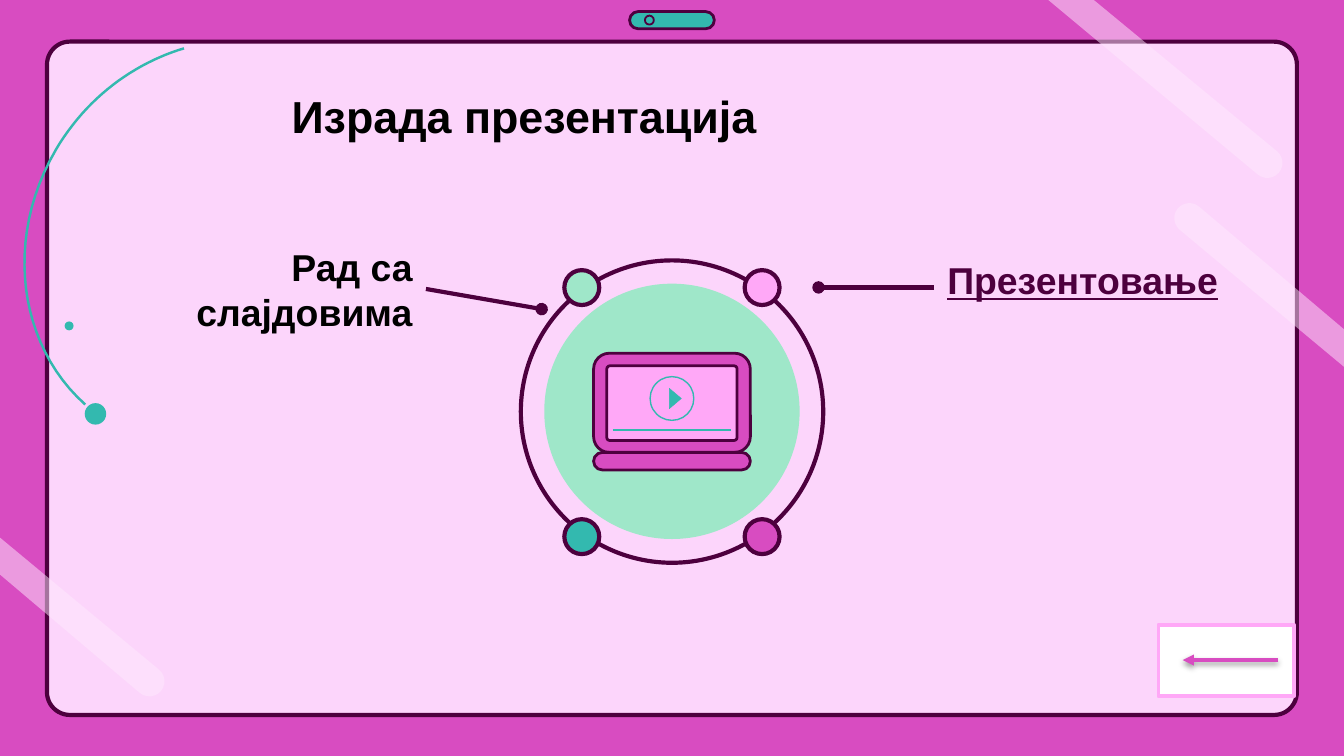
"""Build the slide that introduces making presentations, around a laptop emblem."""
from math import cos, radians, sin

from lxml import etree
from pptx import Presentation
from pptx import util as u
from pptx.dml.color import RGBColor
from pptx.enum import shapes, text
from pptx.oxml import ns

HUES = {"plum": "4D003E", "pink": "D84CC1", "pale": "FCD5FB", "rose": "FFA8F7",
        "teal": "33B9AF", "mint": "9FE7C9", "glow": "FFE9FE",
        "white": "FFFFFF", "black": "000000"}
TITLE = ("Израда презентација", (149, 43.9, 440.6, 36))
LABELS = [
    ("Рад са слајдовима", (64.8, 129.6, 163.4, 50.4), "black", "RIGHT", False),
    ("Презентовање", (500.4, 118.1, 163.4, 63.4), "plum", "LEFT", True),
]
KINDS = {"oval": shapes.MSO_SHAPE.OVAL, "box": shapes.MSO_SHAPE.RECTANGLE,
         "round": shapes.MSO_SHAPE.ROUNDED_RECTANGLE}
FRAME = [
    ("round", (25.2, 22.3, 669.6, 360.7), "pale", "plum", 2.25, 0.034),
    ("round", (337.3, 6.2, 45.4, 9.2), "teal", "plum", 1.5, 0.5),
    ("oval", (345.5, 8.4, 4.8, 4.8), None, "plum", 1, None),
    ("oval", (34.6, 172.2, 4.8, 4.8), "teal", None, 0, None),
    ("oval", (45.4, 216, 11.5, 11.5), "teal", None, 0, None),
]
EMBLEM = [
    ("oval", (291.6, 152, 136.8, 136.8), "mint", None, 0, None),
    ("oval", (279, 139.5, 162, 162), None, "plum", 2.25, None),
    ("round", (318, 189.2, 84, 53.2), "pink", "plum", 1.5, 0.16),
    ("round", (325.1, 196, 69.8, 40), "rose", "plum", 1.5, 0.04),
    ("oval", (348.3, 201.8, 23.4, 23.4), None, "teal", 0.75, None),
    ("round", (318, 242.4, 84, 9.4), "pink", "plum", 1.5, 0.5),
]
DOTS = ["mint", "rose", "teal", "pink"]
DOT, MID, REACH = 18.7, (360, 220.8), (48.3, 66.7)
BUTTON = ("box", (620.6, 334.8, 72.7, 38.2), "white", "rose", 2, None)
PLAY = [(358.6, 208.1), (358.6, 218.9), (365, 213.5)]
ARC = [[(45.7, 216.7), (10, 185), (2, 128), (29.9, 80.3)],
       [(29.9, 80.3), (46.4, 52.2), (72, 33.8), (98.6, 25.9)]]
STREAKS = [  # start, tip, heading, finish
    ((561.6, 0), (679, 87.3), 40, (586, 0)),
    ((0, 307.8), (80.1, 365), 40, (0, 288)),
    ((720, 176.4), (637.2, 116.9), 220, (720, 196.5)),
]
CAP = 8.1


def tint(fmt, hue):
    """Fill solidly, or not at all."""
    if hue:
        fmt.solid()
        fmt.fore_color.rgb = RGBColor.from_string(HUES[hue])
    else:
        fmt.background()


def paint(shape, fill, line, wide=0):
    """Set fill and outline, without a shadow."""
    shape.shadow.inherit = False
    tint(shape.fill, fill)
    tint(shape.line.fill, line)
    if line:
        shape.line.width = u.Pt(wide)
    return shape


def place(pool, kind, rect, fill, line, wide, bend):
    """Add a preset shape."""
    shape = pool.add_shape(KINDS[kind], *map(u.Pt, rect))
    if bend is not None:
        shape.adjustments[0] = bend
    return paint(shape, fill, line, wide)


def trace(pool, spots, fill, line=None, wide=0, close=True):
    """Add an outline through the spots."""
    pts = [(u.Pt(x), u.Pt(y)) for x, y in spots]
    pen = pool.build_freeform(*pts[0], scale=1.0)
    pen.add_line_segments(pts[1:], close=close)
    return paint(pen.convert_to_shape(), fill, line, wide)


def curve(knots, steps=24):
    """Sample a cubic curve."""
    for i in range(steps + 1):
        t = i / steps
        parts = ((1 - t) ** 3, 3 * t * (1 - t) ** 2, 3 * t * t * (1 - t), t ** 3)
        yield tuple(sum(k * p[axis] for k, p in zip(parts, knots)) for axis in (0, 1))


def link(pool, start, end, hue, wide, tip=None):
    """Add a straight line with an optional tip."""
    line = pool.add_connector(shapes.MSO_CONNECTOR.STRAIGHT, *map(u.Pt, start + end))
    tint(line.line.fill, hue)
    line.line.width = u.Pt(wide)
    if tip:
        etree.SubElement(line.line._get_or_add_ln(), ns.qn("a:tailEnd"), type=tip)
    etree.SubElement(line._element.spPr, ns.qn("a:effectLst"))
    return line


def shade(line):
    """Cast a soft shadow downwards."""
    box = line._element.spPr.find(ns.qn("a:effectLst"))
    cast = etree.SubElement(box, ns.qn("a:outerShdw"), blurRad=str(u.Pt(3.1)),
                            dist=str(u.Pt(1.6)), dir="5400000", rotWithShape="0")
    hue = etree.SubElement(cast, ns.qn("a:srgbClr"), val=HUES["black"])
    etree.SubElement(hue, ns.qn("a:alpha"), val="38000")


def write(shape, words, size, hue, side, frame, under=False):
    """Put one styled paragraph in a shape."""
    body = shape.text_frame
    for key, val in frame.items():
        setattr(body, key, val)
    par = body.paragraphs[0]
    par.alignment = text.PP_ALIGN[side]
    run = par.add_run()
    run.text = words
    look = {"name": "Arial", "size": u.Pt(size), "bold": True, "underline": under}
    for key, val in look.items():
        setattr(run.font, key, val)
    run.font.color.rgb = RGBColor.from_string(HUES[hue])


def main():
    """Build and save the slide."""
    deck = Presentation()
    deck.slide_width, deck.slide_height = u.Pt(720), u.Pt(405)
    slide = deck.slides.add_slide(deck.slide_layouts[5])
    pool = slide.shapes
    tint(slide.background.fill, "pink")

    for item in FRAME:
        place(pool, *item)
    trace(pool, [p for knots in ARC for p in curve(knots)], None, "teal", 1.3, False)
    for start, (x, y), head, end in STREAKS:
        turns = [radians(head + 90 - step) for step in range(0, 181, 15)]
        cap = [(x + CAP * cos(a), y + CAP * sin(a)) for a in turns]
        beam = trace(pool, [start, *cap, end], "glow")
        hue = beam._element.spPr.find(".//" + ns.qn("a:srgbClr"))
        etree.SubElement(hue, ns.qn("a:alpha"), val="50000")

    for item in EMBLEM:
        place(pool, *item)
    trace(pool, PLAY, "teal", "teal", 0.25)
    link(pool, (328.3, 230.4), (391.7, 230.4), "teal", 0.75)
    for i, hue in enumerate(DOTS):
        row, col = divmod(i, 2)
        left = MID[0] + (2 * col - 1) * REACH[0] - DOT / 2
        top = MID[1] + (2 * row - 1) * REACH[1] - DOT / 2
        place(pool, "oval", (left, top, DOT, DOT), hue, "plum", 2.25, None)

    frame = {"word_wrap": True, "vertical_anchor": text.MSO_ANCHOR.MIDDLE}
    edges = ("left", "top", "right", "bottom")
    frame.update({"margin_" + edge: u.Pt(7.2) for edge in edges})
    boxes = []
    for words, rect, hue, side, under in LABELS:
        box = pool.add_textbox(*map(u.Pt, rect))
        write(box, words, 20, hue, side, frame, under)
        boxes.append(box)
    lead = link(pool, (228.2, 154.8), (290.2, 165.6), "plum", 2.25, "oval")
    lead.begin_connect(boxes[0], 3)
    link(pool, (500.4, 154), (438.5, 154), "plum", 2.25, "oval")

    place(pool, *BUTTON)
    shade(link(pool, (684.7, 353.6), (633.6, 353.6), "pink", 2, "triangle"))

    words, rect = TITLE
    head = pool.title
    for key, val in zip(("left", "top", "width", "height"), rect):
        setattr(head, key, u.Pt(val))
    write(head, words, 24, "black", "LEFT",
          {"word_wrap": True, "vertical_anchor": text.MSO_ANCHOR.TOP,
           "auto_size": text.MSO_AUTO_SIZE.NONE})
    head.text_frame.paragraphs[0].space_after = u.Pt(3)
    pool._spTree.append(head._element)
    deck.save("out.pptx")


if __name__ == "__main__":
    main()
